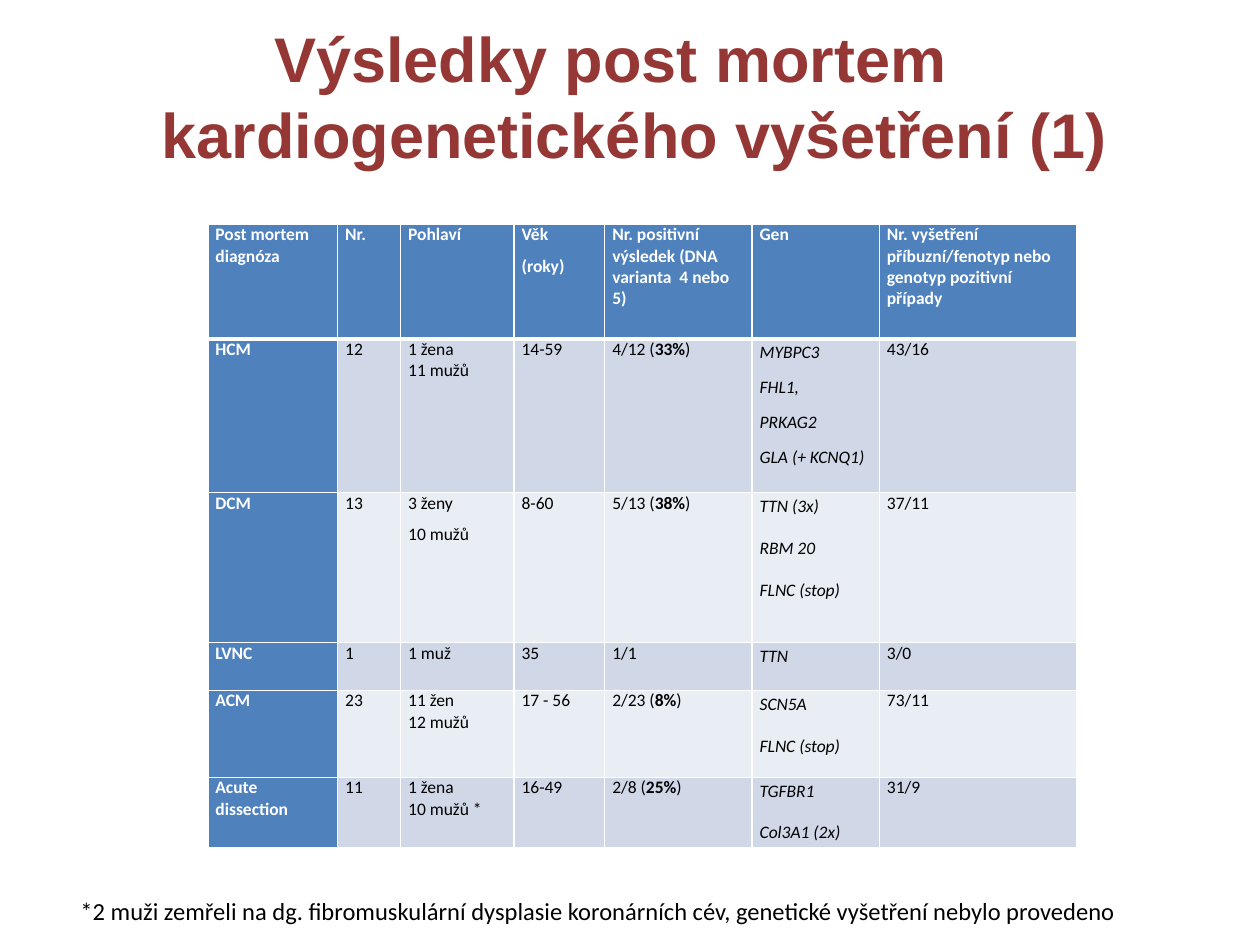
"""Build the slide of post mortem cardiogenetic results."""
import dataclasses

import lxml.etree
import pptx
import pptx.dml.color
import pptx.enum.text
import pptx.oxml.ns
import pptx.util

Inches, Pt = pptx.util.Inches, pptx.util.Pt
WHITE, BLACK, BLUE = "FFFFFF", "000000", "4F81BD"
BANDS = ("D0D8E8", "E9EDF4")
WIDTHS = (1.03, 0.5, 0.9, 0.72, 1.17, 1.01, 1.57)
GENE = 5


@dataclasses.dataclass
class Row:
    """One table row; newlines part paragraphs and bars wrap bold text."""
    height: float
    cells: tuple[str, ...]
    before: float = 0
    after: float = 10


ROWS = (
    Row(0.91, ("Post mortem diagnóza", "Nr.", "Pohlaví", "Věk\n(roky)",
               "Nr. positivní výsledek (DNA varianta  4 nebo 5)", "Gen",
               "Nr. vyšetření příbuzní/fenotyp nebo genotyp pozitivní případy"),
        before=6),
    Row(1.22, ("HCM", "12", "1 žena\n11 mužů", "14-59", "4/12 (|33%|)",
               "MYBPC3\nFHL1,\nPRKAG2\nGLA (+ KCNQ1)", "43/16"), after=6),
    Row(1.19, ("DCM", "13", "3 ženy\n10 mužů", "8-60", "5/13 (|38%|)",
               "TTN (3x)\nRBM 20\nFLNC (stop)", "37/11"), before=6),
    Row(0.38, ("LVNC", "1", "1 muž", "35", "1/1", "TTN", "3/0")),
    Row(0.69, ("ACM", "23", "11 žen\n12 mužů", "17 - 56", "2/23 (|8%|)",
               "SCN5A\nFLNC (stop)", "73/11")),
    Row(0.56, ("Acute dissection", "11", "1 žena\n10 mužů *", "16-49",
               "2/8 (|25%|)", "TGFBR1\nCol3A1 (2x)", "31/9")),
)


def color(code: str) -> pptx.dml.color.RGBColor:
    """Turn a hex string into a colour."""
    return pptx.dml.color.RGBColor.from_string(code)


def style(font, name: str, size: float, code: str, bold: bool = False) -> None:
    """Set the face, size, colour and weight of a font."""
    font.name, font.size, font.bold = name, Pt(size), bold
    font.color.rgb = color(code)


def border(cell, side: str, width: float) -> None:
    """Draw one white edge of a cell."""
    qn = pptx.oxml.ns.qn
    line = lxml.etree.SubElement(
        cell._tc.get_or_add_tcPr(), qn(f"a:ln{side}"), w=str(Pt(width)))
    fill = lxml.etree.SubElement(line, qn("a:solidFill"))
    lxml.etree.SubElement(fill, qn("a:srgbClr"), val=WHITE)


def fill_cell(cell, row: Row, top: int, col: int) -> None:
    """Format one table cell and write its paragraphs."""
    head = top == 0 or col == 0
    thick = {(0, "B"), (1, "T")}
    for side in "LRTB":
        border(cell, side, 3 if (top, side) in thick else 1)
    cell.fill.solid()
    cell.fill.fore_color.rgb = color(BLUE if head else BANDS[(top - 1) % 2])
    cell.margin_left = cell.margin_right = Inches(0.06)
    cell.margin_top = cell.margin_bottom = 0
    frame = cell.text_frame
    for i, text in enumerate(row.cells[col].split("\n")):
        para = frame.add_paragraph() if i else frame.paragraphs[0]
        style(para.font, "Calibri", 10, WHITE if head else BLACK, head)
        if col == GENE and top:
            para.font.italic = True
            para.line_spacing = 1.15
            para.space_after = Pt(row.after)
        elif i:
            para.space_before = Pt(row.before)
        for j, part in enumerate(text.split("|")):
            run = para.add_run()
            run.text = part
            if j % 2:
                run.font.bold = True


def add_title(slide) -> None:
    """Place and format the title."""
    title = slide.shapes.title
    title.left, title.top = Inches(0.2), Inches(0.1)
    title.width, title.height = Inches(9.29), Inches(1.31)
    frame = title.text_frame
    frame.text = "Výsledky post mortem kardiogenetického vyšetření (1)"
    frame.word_wrap = True
    frame.vertical_anchor = pptx.enum.text.MSO_ANCHOR.MIDDLE
    para = frame.paragraphs[0]
    para.alignment = pptx.enum.text.PP_ALIGN.CENTER
    props = para._p.get_or_add_pPr()
    props.set("marL", str(Inches(0.38)))
    props.set("indent", str(Inches(-0.38)))
    style(para.font, "Arial", 36, "953735", True)


def add_table(slide) -> None:
    """Draw the table of results."""
    tall = sum(row.height for row in ROWS)
    table = slide.shapes.add_table(
        len(ROWS), len(WIDTHS), Inches(1.65), Inches(1.78),
        Inches(sum(WIDTHS)), Inches(tall)).table
    table.first_row = table.horz_banding = False
    for col, width in enumerate(WIDTHS):
        table.columns[col].width = Inches(width)
    for top, row in enumerate(ROWS):
        table.rows[top].height = Inches(row.height)
        for col in range(len(WIDTHS)):
            fill_cell(table.cell(top, col), row, top, col)


def add_note(slide) -> None:
    """Write the footnote below the table."""
    frame = slide.shapes.add_textbox(
        Inches(0.54), Inches(7.06), Inches(8.98), Inches(0.34)).text_frame
    frame.word_wrap = True
    para = frame.paragraphs[0]
    para.text = ("*2 muži zemřeli na dg. fibromuskulární dysplasie koronárních "
                 "cév, genetické vyšetření nebylo provedeno")
    style(para.font, "Calibri", 14, BLACK)


def main() -> None:
    """Build and save the deck."""
    deck = pptx.Presentation()
    deck.slide_width, deck.slide_height = Inches(10), Inches(7.5)
    slide = deck.slides.add_slide(deck.slide_layouts[5])
    add_title(slide)
    add_table(slide)
    add_note(slide)
    deck.save("out.pptx")


if __name__ == "__main__":
    main()
